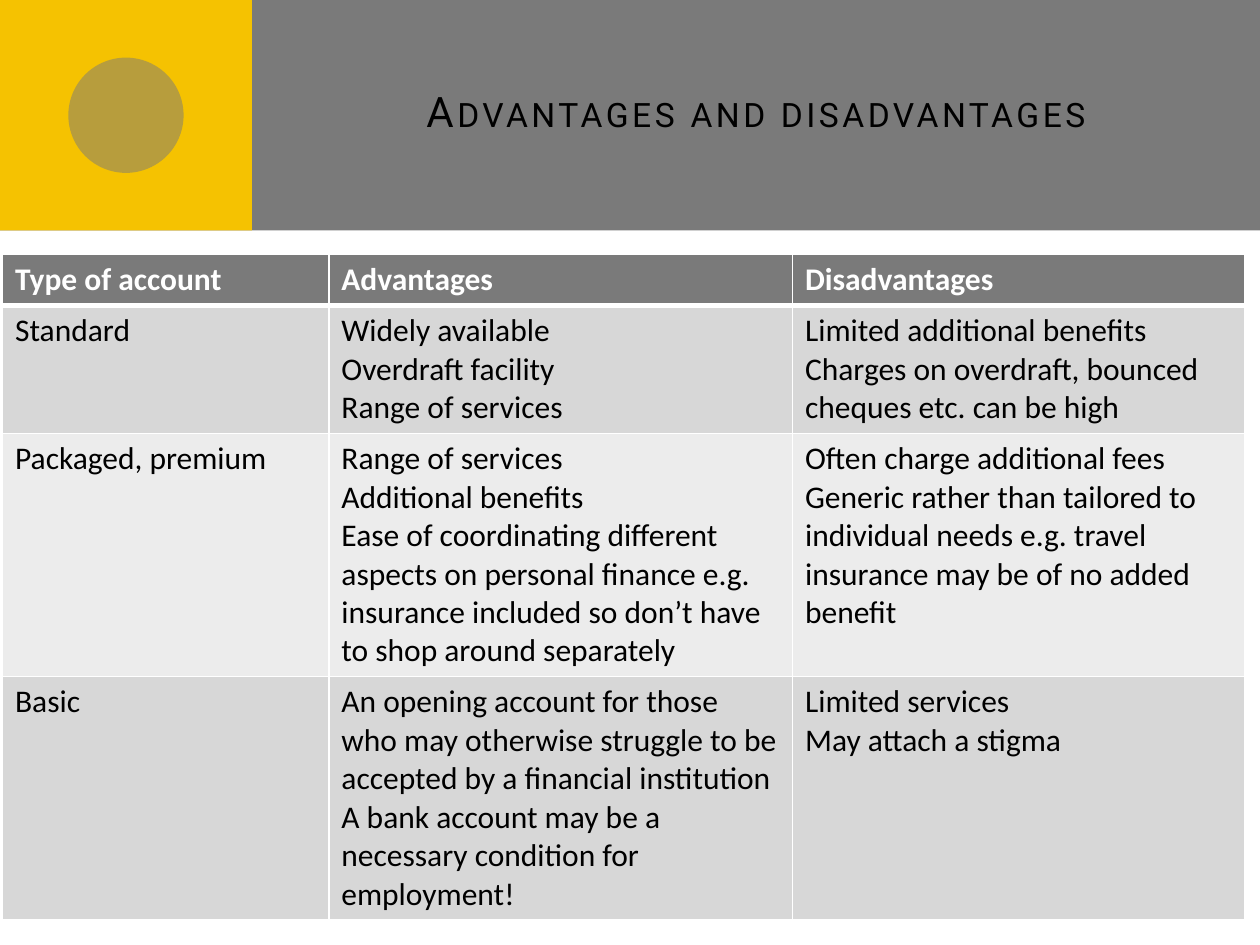
import pptx
import pptx.dml.color
import pptx.enum.shapes
import pptx.enum.text
import pptx.oxml
import pptx.oxml.ns
import pptx.util

COLORS = {"gray": "7A7A7A", "gold": "F5C201", "dark_row": "D7D7D7",
          "light_row": "ECECEC", "white": "FFFFFF", "black": "000000"}
WIDTH, HEIGHT = 10, 7.5
BANNER = 1.83
COLUMNS = [2.59, 3.68, 3.59]
LINES_PER_ROW = [1, 3, 6, 6]
LINE_HEIGHT, CELL_PADDING = 0.305, 0.1
TITLE_FORMAT = {"name": "Roboto", "size": pptx.util.Pt(24)}
HEADER_FORMAT = {"name": "Calibri", "size": pptx.util.Pt(18), "bold": True}
BODY_FORMAT = {**HEADER_FORMAT, "bold": False}
ACCOUNTS = [
    [["Type of account"], ["Advantages"], ["Disadvantages"]],
    [["Standard"],
     ["Widely available", "Overdraft facility", "Range of services"],
     ["Limited additional benefits",
      "Charges on overdraft, bounced cheques etc. can be high"]],
    [["Packaged, premium"],
     ["Range of services", "Additional benefits",
      "Ease of coordinating different aspects on personal finance e.g. "
      "insurance included so don’t have to shop around separately"],
     ["Often charge additional fees",
      "Generic rather than tailored to individual needs e.g. travel "
      "insurance may be of no added benefit"]],
    [["Basic"],
     ["An opening account for those who may otherwise struggle to be "
      "accepted by a financial institution",
      "A bank account may be a necessary condition for employment!"],
     ["Limited services", "May attach a stigma"]],
]


def color(name):
    return pptx.dml.color.RGBColor.from_string(COLORS[name])


def inches(*lengths):
    return [pptx.util.Inches(length) for length in lengths]


def paint(target, name):
    target.fill.solid()
    target.fill.fore_color.rgb = color(name)


def write(para, text, formats, color_name):
    span = para.add_run()
    span.text = text
    for key, value in formats.items():
        setattr(span.font, key, value)
    span.font.color.rgb = color(color_name)
    return span


def add_block(page, kind, area, fill, opacity=None):
    block = page.shapes.add_shape(kind, *inches(*area))
    block.shadow.inherit = False
    paint(block, fill)
    block.line.fill.background()
    if opacity is not None:
        tone = block.fill._xPr.find(".//" + pptx.oxml.ns.qn("a:srgbClr"))
        tone.append(pptx.oxml.parse_xml(
            f'<a:alpha {pptx.oxml.ns.nsdecls("a")} val="{opacity * 1000}"/>'))


def add_title(page, text):
    box = page.shapes.add_textbox(*inches(2.67, 0.25, 6.83, 1.25))
    box.text_frame.word_wrap = True
    box.text_frame.vertical_anchor = pptx.enum.text.MSO_ANCHOR.MIDDLE
    para = box.text_frame.paragraphs[0]
    para.alignment = pptx.enum.text.PP_ALIGN.RIGHT
    properties = write(para, text, TITLE_FORMAT, "black").font._element
    for key, value in {"cap": "small", "spc": "200"}.items():
        properties.set(key, value)


def add_borders(cell, bottom):
    properties = cell._tc.get_or_add_tcPr()
    widths = {"lnL": 1, "lnR": 1, "lnT": 1, "lnB": bottom}
    for position, (tag, width) in enumerate(widths.items()):
        properties.insert(position, pptx.oxml.parse_xml(
            f'<a:{tag} {pptx.oxml.ns.nsdecls("a")} w="{pptx.util.Pt(width)}">'
            f'<a:solidFill><a:srgbClr val="{COLORS["white"]}"/></a:solidFill>'
            f'</a:{tag}>'))


def fill_cell(cell, texts, row):
    header = row == 0
    paint(cell, "gray" if header else "dark_row" if row % 2 else "light_row")
    add_borders(cell, 3 if header or row == 0 else 1)
    for index, text in enumerate(texts):
        frame = cell.text_frame
        para = frame.add_paragraph() if index else frame.paragraphs[0]
        write(para, text, HEADER_FORMAT if header else BODY_FORMAT,
              "white" if header else "black")


def add_accounts_table(page):
    heights = [lines * LINE_HEIGHT + CELL_PADDING for lines in LINES_PER_ROW]
    table = page.shapes.add_table(
        len(heights), len(COLUMNS),
        *inches(0.02, 2.02, sum(COLUMNS), sum(heights))).table
    for column, width in zip(table.columns, inches(*COLUMNS)):
        column.width = width
    for row, height in zip(table.rows, inches(*heights)):
        row.height = height
    for row, cells in enumerate(ACCOUNTS):
        for column, texts in enumerate(cells):
            fill_cell(table.cell(row, column), texts, row)


def main():
    deck = pptx.Presentation()
    deck.slide_width, deck.slide_height = inches(WIDTH, HEIGHT)
    page = deck.slides.add_slide(deck.slide_layouts[6])
    shapes = pptx.enum.shapes.MSO_SHAPE
    side, circle = WIDTH / 5, BANNER / 2
    add_block(page, shapes.RECTANGLE, (0, 0, WIDTH, BANNER), "gray")
    add_block(page, shapes.RECTANGLE, (0, 0, side, BANNER), "gold")
    add_block(page, shapes.OVAL, ((side - circle) / 2, (BANNER - circle) / 2,
                                  circle, circle), "gray", opacity=50)
    add_title(page, "Advantages and disadvantages")
    add_accounts_table(page)
    deck.save("out.pptx")


if __name__ == "__main__":
    main()
